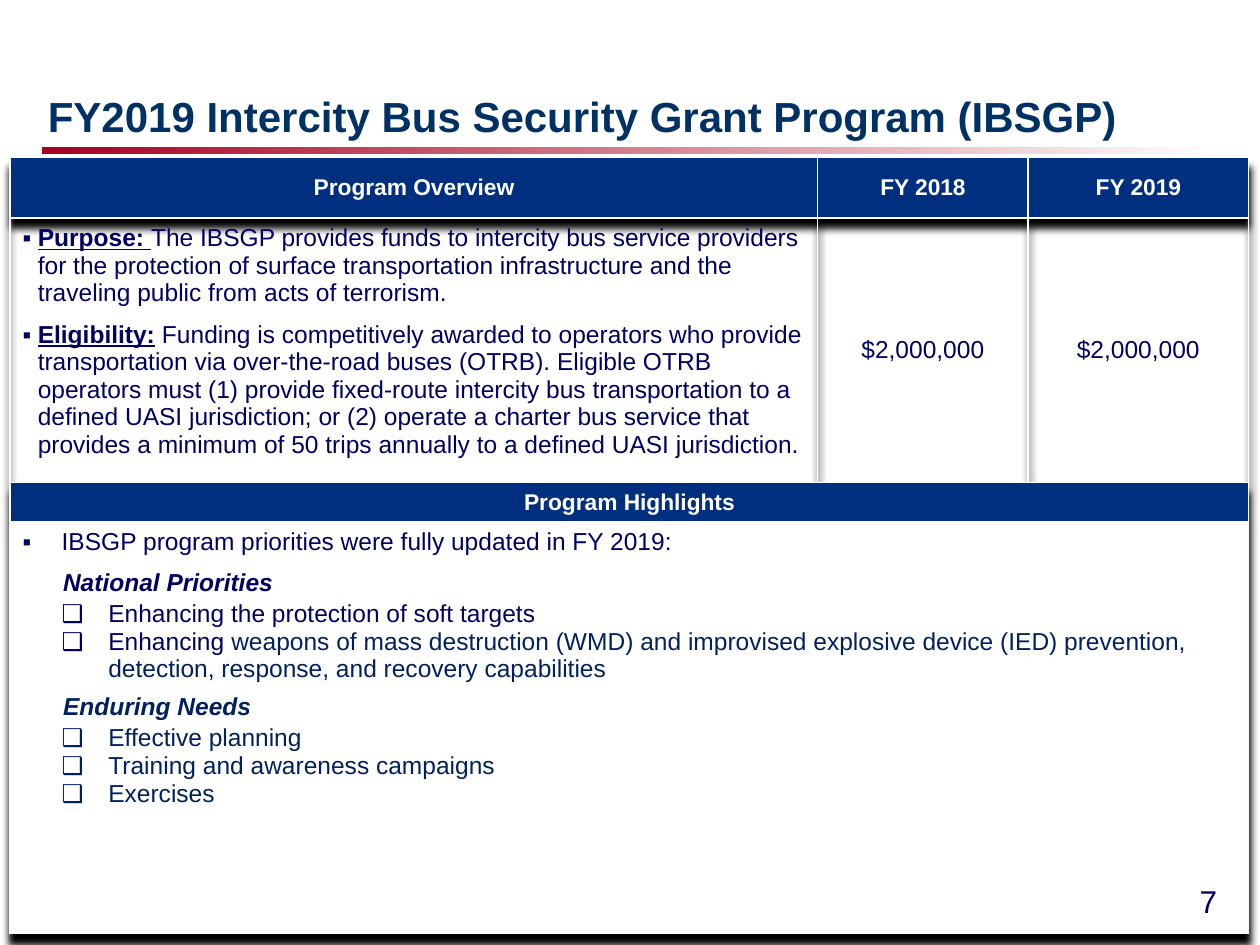
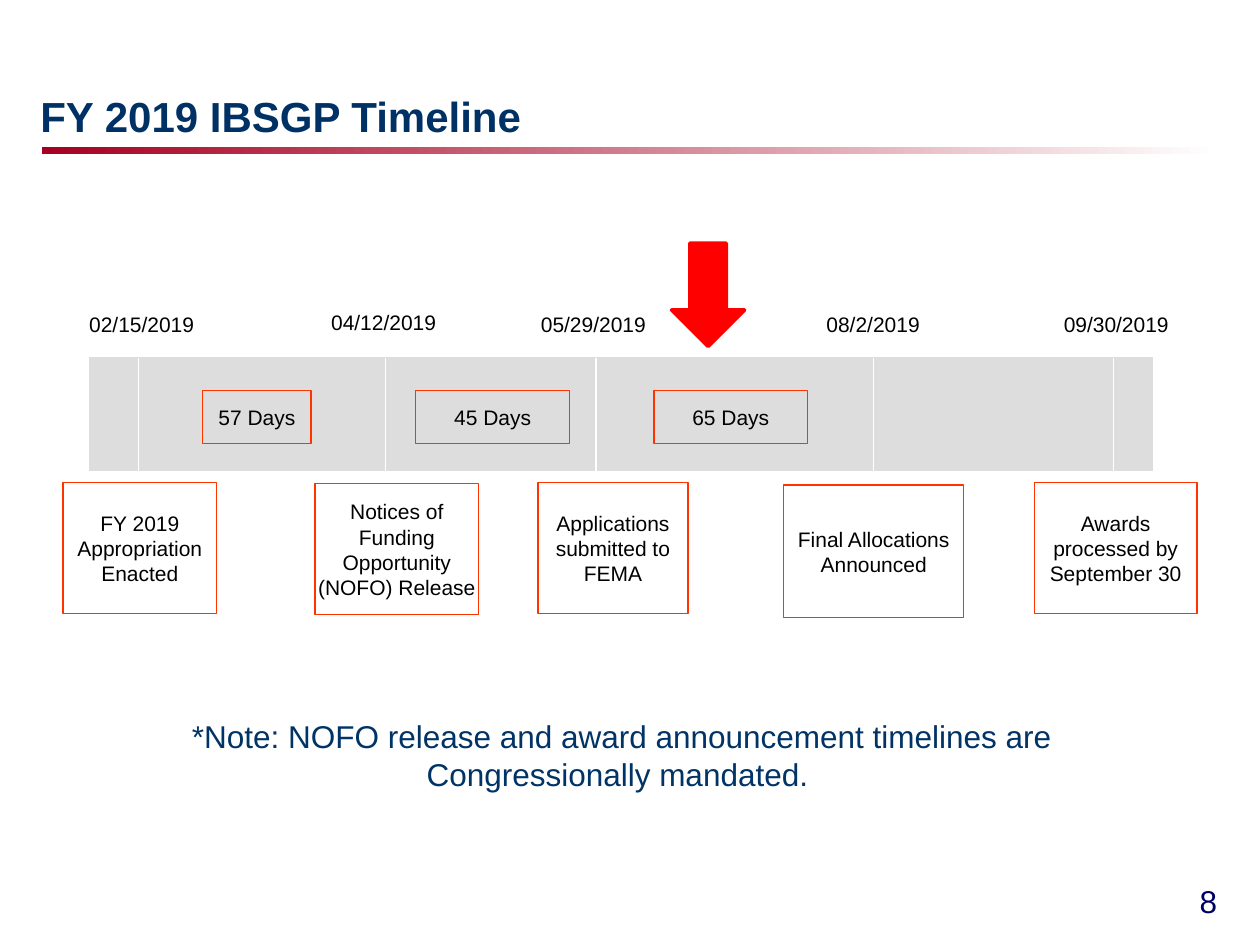
from lxml.etree import SubElement
from pptx import Presentation
from pptx.dml.color import RGBColor
from pptx.enum.shapes import MSO_CONNECTOR, MSO_SHAPE
from pptx.enum.text import MSO_ANCHOR, MSO_AUTO_SIZE, PP_ALIGN
from pptx.oxml.ns import qn
from pptx.util import Inches, Pt

NAVY, TITLE, HEAD = "000063", "003164", "002F80"
DEEP, NOTE, RED = "002060", "003366", "A50021"
WHITE, BLACK, GREY, EDGE, ARROW = "FFFFFF", "000000", "DDDDDD", "FF3300", "FF0000"
PLAIN_GRID = "{2D5ABB26-0587-4C30-8999-92F81FD0307C}"


def rgb(code):
    return RGBColor.from_string(code)


class Deck:
    """Holds the shared style and the slide being built."""

    def __init__(self):
        self.prs = Presentation()
        self.prs.slide_width, self.prs.slide_height = Inches(10), Inches(7.5)
        self.font = "Arial"

    def start(self, title, left):
        self.slide = self.prs.slides.add_slide(self.prs.slide_layouts[5])
        self.shapes = self.slide.shapes
        self.band()
        self.title(title, left)

    def page(self, number):
        frame = self.text(str(number), (7.33, 6.83, 2.33, 0.52), 18, NAVY, PP_ALIGN.RIGHT)
        frame.vertical_anchor = MSO_ANCHOR.BOTTOM
        frame.margin_left = frame.margin_right = 0

    def band(self):
        bar = self.rect((0.33, 1.17, 9.33, 0.05))
        bar.fill.gradient()
        bar.fill.gradient_angle = 0
        for stop, color in zip(bar.fill.gradient_stops, (RED, WHITE)):
            stop.color.rgb = rgb(color)

    def title(self, words, left):
        shape = self.shapes.title
        shape.left, shape.top, shape.width, shape.height = map(Inches, (0, 0.5, 10, 0.67))
        frame = shape.text_frame
        frame.text = words
        frame.auto_size = MSO_AUTO_SIZE.NONE
        frame.vertical_anchor = MSO_ANCHOR.BOTTOM
        frame.margin_left = Inches(left)
        self.style(frame, 24, TITLE, PP_ALIGN.LEFT, True)

    def style(self, frame, size, color, align, bold=False):
        for para in frame.paragraphs:
            para.alignment = align
            for run in para.runs:
                self.ink(run, size, color, bold)

    def ink(self, run, size, color, bold=False, italic=False, under=False):
        font = run.font
        font.name, font.size, font.color.rgb = self.font, Pt(size), rgb(color)
        font.bold, font.italic, font.underline = bold, italic, under

    def text(self, words, box, size, color, align=PP_ALIGN.CENTER):
        frame = self.shapes.add_textbox(*map(Inches, box)).text_frame
        frame.word_wrap = True
        frame.text = words
        self.style(frame, size, color, align)
        return frame

    def rect(self, box, fill=None, edge=None, width=0.75, kind=MSO_SHAPE.RECTANGLE):
        shape = self.shapes.add_shape(kind, *map(Inches, box))
        shape.shadow.inherit = False
        if fill:
            shape.fill.solid()
            shape.fill.fore_color.rgb = rgb(fill)
        else:
            shape.fill.background()
        if edge:
            shape.line.color.rgb = rgb(edge)
            shape.line.width = Pt(width)
        else:
            shape.line.fill.background()
        return shape

    def card(self, words, box, inset=0.1):
        frame = self.rect(box, edge=EDGE).text_frame
        frame.text = words
        frame.word_wrap = True
        frame.vertical_anchor = MSO_ANCHOR.MIDDLE
        frame.margin_left = frame.margin_right = Inches(inset)
        self.style(frame, 12, BLACK, PP_ALIGN.CENTER)

    def tick(self, x, top, end):
        line = self.shapes.add_connector(
            MSO_CONNECTOR.STRAIGHT, *map(Inches, (x, top, x, end)))
        line.line.color.rgb = rgb(WHITE)
        line.line.width = Pt(0.75)
        SubElement(line._element.spPr, qn("a:effectLst"))

    def grid(self, box, cols, rows):
        frame = self.shapes.add_table(len(rows), len(cols), *map(Inches, box))
        table = frame.table
        table.first_row = table.horz_banding = False
        props = table._tbl.tblPr
        props.find(qn("a:tableStyleId")).text = PLAIN_GRID
        effect = SubElement(props, qn("a:effectLst"))
        props.insert(0, effect)
        shade = SubElement(effect, qn("a:outerShdw"), blurRad="50800", dist="76200",
                           dir="5400000", algn="t", rotWithShape="0")
        SubElement(shade, qn("a:srgbClr"), val=BLACK)
        for col, width in zip(table.columns, cols):
            col.width = Inches(width)
        for row, height in zip(table.rows, rows):
            row.height = Inches(height)
        for cell in table.iter_cells():
            self.border(cell)
            cell.fill.background()
        return table

    def border(self, cell):
        props = cell._tc.get_or_add_tcPr()
        for side in ("lnL", "lnR", "lnT", "lnB"):
            line = SubElement(props, qn(f"a:{side}"), w=str(Pt(1)))
            fill = SubElement(line, qn("a:solidFill"))
            SubElement(fill, qn("a:srgbClr"), val=WHITE)

    def cell(self, cell, words, size, color, fill=None, bold=False):
        cell.text = words
        cell.vertical_anchor = MSO_ANCHOR.MIDDLE
        if fill:
            self.fill(cell, fill)
        self.style(cell.text_frame, size, color, PP_ALIGN.CENTER, bold)

    def fill(self, cell, color):
        cell.fill.solid()
        cell.fill.fore_color.rgb = rgb(color)

    def para(self, frame, runs, left, hang=0, mark=None, before=0, after=0):
        first = not frame.paragraphs[0].runs
        para = frame.paragraphs[0] if first else frame.add_paragraph()
        props = para._p.get_or_add_pPr()
        props.set("marL", str(Inches(left)))
        props.set("indent", str(-Inches(hang)))
        if mark:
            SubElement(props, qn("a:buFont"), typeface=self.font)
            SubElement(props, qn("a:buChar"), char=mark)
        para.space_before = Pt(0 if first else before)
        para.space_after = Pt(after)
        for words, color, *looks in runs:
            run = para.add_run()
            run.text = words
            self.ink(run, 14, color, *looks)


def program(deck):
    deck.start("FY2019 Intercity Bus Security Grant Program (IBSGP)", 0.38)
    table = deck.grid((0.08, 1.25, 9.83, 6.16), (6.41, 1.67, 1.75), (0.48, 2.1, 0.31, 3.27))
    for col, words in enumerate(("Program Overview", "FY 2018", "FY 2019")):
        deck.cell(table.cell(0, col), words, 13, WHITE, HEAD, True)
    for col in (1, 2):
        deck.cell(table.cell(1, col), "$2,000,000", 14, NAVY)
    for row in (2, 3):
        table.cell(row, 0).merge(table.cell(row, 2))
    deck.cell(table.cell(2, 0), "Program Highlights", 13, WHITE, HEAD, True)

    about = (
        ("Purpose: ", "The IBSGP provides funds to intercity bus service providers for the "
         "protection of surface transportation infrastructure and the traveling public "
         "from acts of terrorism."),
        ("Eligibility:", " Funding is competitively awarded to operators who provide "
         "transportation via over-the-road buses (OTRB). Eligible OTRB operators must "
         "(1) provide fixed-route intercity bus transportation to a defined UASI "
         "jurisdiction; or (2) operate a charter bus service that provides a minimum of "
         "50 trips annually to a defined UASI jurisdiction."),
    )
    frame = table.cell(1, 0).text_frame
    for label, words in about:
        runs = [(label, NAVY, True, False, True), (words, NAVY)]
        deck.para(frame, runs, 0.12, 0.12, "▪", 6, 2)

    deck.fill(table.cell(3, 0), WHITE)
    frame = table.cell(3, 0).text_frame
    intro = "IBSGP program priorities were fully updated in FY 2019:"
    deck.para(frame, [(intro, NAVY)], 0.31, 0.31, "▪", 6, 6)
    weapons = (" weapons of mass destruction (WMD) and improvised explosive device (IED) "
               "prevention, detection, response, and recovery capabilities")
    needs = ("Effective planning", "Training and awareness campaigns", "Exercises")
    groups = (
        ("National Priorities", NAVY, 2, (
            [("Enhancing the protection of soft targets", NAVY)],
            [("Enhancing", NAVY), (weapons, DEEP)])),
        ("Enduring Needs", DEEP, 6, [[(need, DEEP)] for need in needs]),
    )
    for head, color, before, items in groups:
        deck.para(frame, [(head, color, True, True)], 0.32, before=before, after=2)
        for runs in items:
            deck.para(frame, runs, 0.68, 0.37, "❑")
    deck.page(7)


def timeline(deck):
    deck.start("FY 2019 IBSGP Timeline", 0.32)
    deck.rect((0.7, 2.83, 8.46, 0.91), GREY, WHITE)
    events = (
        ("02/15/2019", (0.6, 2.42, 1.05, 0.38), 1.1,
         "FY 2019 Appropriation Enacted", (0.5, 3.83, 1.22, 1.04), 0.1),
        ("04/12/2019", (2.42, 2.41, 1.25, 0.32), 3.06,
         "Notices of Funding Opportunity (NOFO) Release", (2.5, 3.84, 1.3, 1.04), 0),
        ("05/29/2019", (4.13, 2.42, 1.16, 0.32), 4.73,
         "Applications submitted to FEMA", (4.27, 3.83, 1.19, 1.04), 0.1),
        ("08/2/2019", (6.4, 2.42, 1.06, 0.38), 6.93,
         "Final Allocations\nAnnounced", (6.22, 3.85, 1.43, 1.05), 0.1),
        ("09/30/2019", (8.26, 2.42, 1.2, 0.38), 8.84,
         "Awards processed by September 30", (8.21, 3.83, 1.29, 1.04), 0.1),
    )
    for date, spot, x, words, box, inset in events:
        deck.text(date, spot, 12, BLACK)
        deck.tick(x, 2.84, 3.74)
        deck.card(words, box, inset)
    for days, left, width in ((57, 1.61, 0.86), (45, 3.3, 1.22), (65, 5.19, 1.22)):
        deck.card(f"{days} Days", (left, 3.1, width, 0.42))
    deck.rect((5.33, 1.93, 0.58, 0.82), ARROW, ARROW, 2, MSO_SHAPE.DOWN_ARROW)
    deck.text("*Note: NOFO release and award announcement timelines are "
              "Congressionally mandated. ", (1.06, 5.64, 7.75, 0.71), 18, NOTE)
    deck.page(8)


def main():
    deck = Deck()
    program(deck)
    timeline(deck)
    deck.prs.save("out.pptx")


if __name__ == "__main__":
    main()
